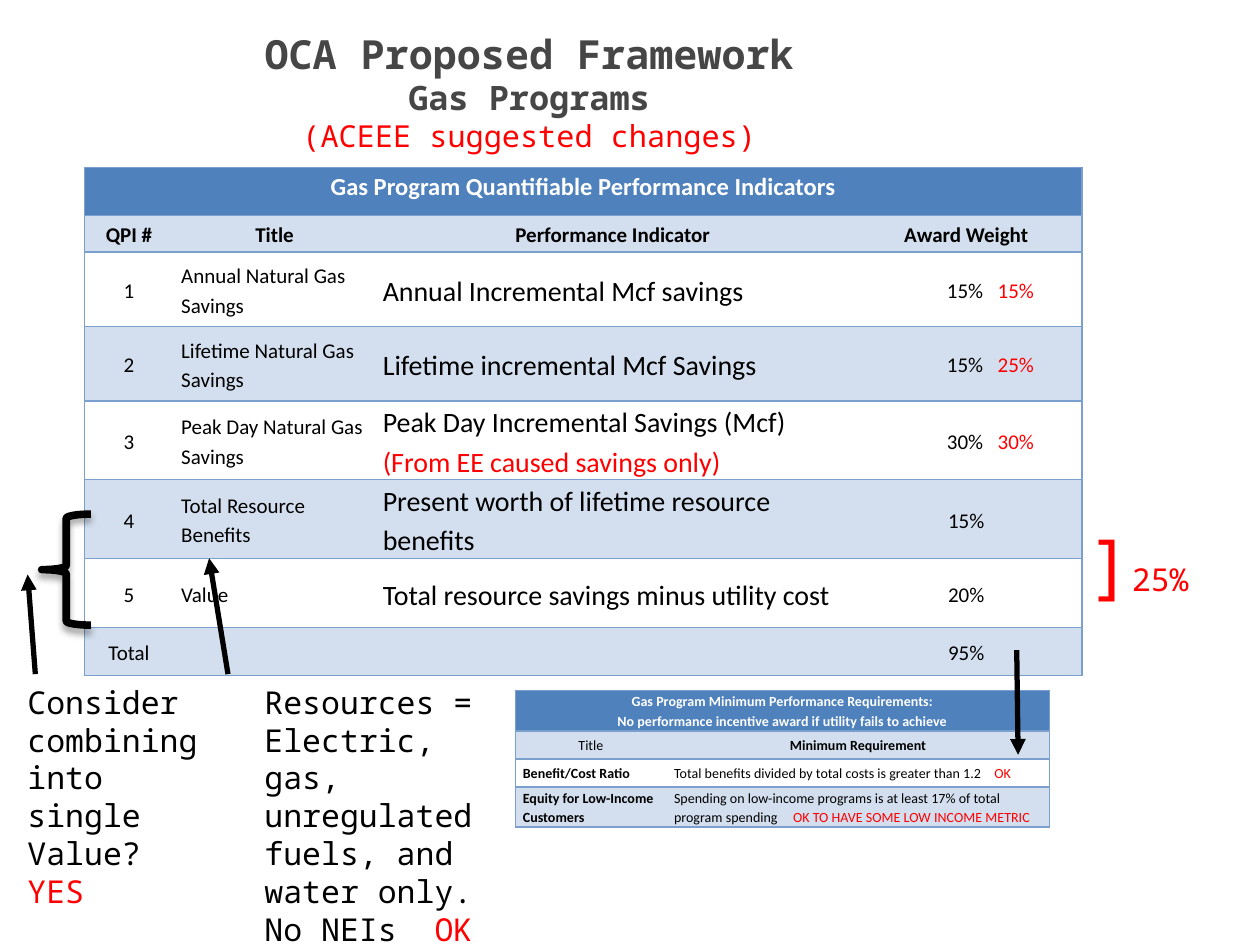
from lxml import etree
from pptx import Presentation
from pptx.dml.color import RGBColor
from pptx.enum.shapes import MSO_CONNECTOR, MSO_SHAPE
from pptx.enum.text import MSO_ANCHOR, PP_ALIGN
from pptx.oxml.ns import qn
from pptx.util import Pt

LEFT, CENTER = PP_ALIGN.LEFT, PP_ALIGN.CENTER
TOP, MIDDLE = MSO_ANCHOR.TOP, MSO_ANCHOR.MIDDLE
STRAIGHT = MSO_CONNECTOR.STRAIGHT
LEFT_BRACE = MSO_SHAPE.LEFT_BRACE

BLACK = RGBColor(0x00, 0x00, 0x00)
WHITE = RGBColor(0xFF, 0xFF, 0xFF)
GRAY = RGBColor(0x46, 0x46, 0x46)
RED = RGBColor(0xFF, 0x00, 0x00)
HEADER_BLUE = RGBColor(0x4F, 0x81, 0xBD)
BAND_BLUE = RGBColor(0xD3, 0xDF, 0xEE)
BORDER_BLUE = RGBColor(0x7B, 0xA0, 0xCD)
MONO, SANS = "Noto Sans Mono", "Calibri"


def write(paragraph, text, size=18, color=BLACK, bold=False, font=MONO):
    """Add text to a paragraph; whatever follows a | is red."""
    for part, part_color in zip(text.split("|"), (color, RED)):
        if part:
            run = paragraph.add_run()
            run.text = part
            run.font.size = Pt(size)
            run.font.name = font
            run.font.bold = bold
            run.font.color.rgb = part_color


def set_borders(cell, sides):
    """Draw the named sides of a cell and clear the others."""
    properties = cell._tc.get_or_add_tcPr()
    for index, side in enumerate("LRTB"):
        line = etree.Element(qn(f"a:ln{side}"), w=str(Pt(1)))
        if side in sides:
            fill = etree.SubElement(line, qn("a:solidFill"))
            etree.SubElement(fill, qn("a:srgbClr"), val=str(BORDER_BLUE))
        else:
            etree.SubElement(line, qn("a:noFill"))
        properties.insert(index, line)


presentation = Presentation()
presentation.slide_width, presentation.slide_height = Pt(720), Pt(540)
slide = presentation.slides.add_slide(presentation.slide_layouts[6])

# Tables: "\n" starts a paragraph, tabs place the suggested values
requirements = {
    "position": (294.5, 394.6),
    "widths": (86.4, 218.9),
    "heights": (23, 16, 16, 23),
    "sizes": (8, 8),
    "header_size": 8,
    "alignments": (LEFT, LEFT),
    "bold_columns": (0,),
    "plain_headings": ("Title",),
    "rows": (
        ("Gas Program Minimum Performance Requirements:\n"
         "No performance incentive award if utility fails to achieve",),
        ("Title", "Minimum Requirement"),
        ("Benefit/Cost Ratio",
         "Total benefits divided by total costs is greater than 1.2\t|OK"),
        ("Equity for Low-Income Customers",
         "Spending on low-income programs is at least 17% of total "
         "program spending\t|OK TO HAVE SOME LOW INCOME METRIC"),
    ),
    "tabs": (68, 183),
}
indicators = {
    "position": (48.2, 95.8),
    "widths": (51.1, 115.2, 271.4, 132.5),
    "heights": (27.4, 20.9, 42.5, 42.5, 44.6, 44.6, 39.6, 27.4),
    "sizes": (12, 12, 16, 12),
    "header_size": 14,
    "alignments": (CENTER, LEFT, LEFT, CENTER),
    "bold_columns": (),
    "plain_headings": (),
    "rows": (
        ("Gas Program Quantifiable Performance Indicators",),
        ("QPI #", "Title", "Performance Indicator", "Award Weight"),
        ("1", "Annual Natural Gas Savings",
         "Annual Incremental Mcf savings", "\t15%\t|15%"),
        ("2", "Lifetime Natural Gas Savings",
         "Lifetime incremental Mcf Savings", "\t15%\t|25%"),
        ("3", "Peak Day Natural Gas Savings",
         "Peak Day Incremental Savings (Mcf)\n|(From EE caused savings only)",
         "\t30%\t|30%"),
        ("4", "Total Resource Benefits",
         "Present worth of lifetime resource benefits", "15%"),
        ("5", "Value", "Total resource savings minus utility cost", "20%"),
        ("Total", "", "", "95%"),
    ),
    "tabs": (51, 80),
}

for spec in (requirements, indicators):
    widths, heights = spec["widths"], spec["heights"]
    left, top = spec["position"]
    table = slide.shapes.add_table(
        len(heights), len(widths), Pt(left), Pt(top),
        Pt(sum(widths)), Pt(sum(heights))).table
    table.first_row = table.horz_banding = False
    for column, width in zip(table.columns, widths):
        column.width = Pt(width)
    for row, height in zip(table.rows, heights):
        row.height = Pt(height)
    last = len(widths) - 1
    table.cell(0, 0).merge(table.cell(0, last))

    for row_index, texts in enumerate(spec["rows"]):
        title_row, heading_row = row_index == 0, row_index == 1
        for column_index in range(len(widths)):
            cell = table.cell(row_index, column_index)
            sides = "TB"
            if title_row or column_index == 0:
                sides += "L"
            if title_row or column_index == last:
                sides += "R"
            set_borders(cell, sides)
            if title_row or row_index % 2:
                cell.fill.solid()
                cell.fill.fore_color.rgb = HEADER_BLUE if title_row else BAND_BLUE
            else:
                cell.fill.background()
            cell.margin_left = cell.margin_right = Pt(4.3)
            cell.margin_top = cell.margin_bottom = 0
            cell.vertical_anchor = TOP if title_row else MIDDLE
            if column_index >= len(texts) or not texts[column_index]:
                continue

            size = spec["sizes"][column_index]
            alignment = spec["alignments"][column_index]
            bold = column_index in spec["bold_columns"]
            if title_row:
                size, alignment, bold = spec["header_size"], CENTER, True
            elif heading_row:
                size, alignment = min(spec["sizes"]), CENTER
                bold = texts[column_index] not in spec["plain_headings"]
            for index, line in enumerate(texts[column_index].split("\n")):
                frame = cell.text_frame
                paragraph = frame.add_paragraph() if index else frame.paragraphs[0]
                paragraph.alignment = LEFT if "\t" in line else alignment
                paragraph.line_spacing = 1.15
                if "\t" in line:
                    tab_list = etree.SubElement(
                        paragraph._p.get_or_add_pPr(), qn("a:tabLst"))
                    for stop in spec["tabs"]:
                        etree.SubElement(tab_list, qn("a:tab"),
                                         pos=str(Pt(stop)), algn="l")
                write(paragraph, line, size=size, bold=bold, font=SANS,
                      color=WHITE if title_row else BLACK)

# Title and side notes: box, anchor, alignment, paragraphs of formatted runs
notes = (
    ((27.4, 18, 550, 68.4), MIDDLE, CENTER, (
        (("OCA Proposed Framework", {"size": 22.9, "color": GRAY, "bold": True}),),
        (("Gas Programs", {"size": 19.2, "color": GRAY, "bold": True}),),
        (("(ACEEE suggested changes)", {"size": 17.3, "color": RED}),))),
    ((612.7, 293.8, 76.3, 56.2), TOP, CENTER, (
        (("]", {"size": 40.5, "color": RED}), ("25%", {"color": RED})),)),
    ((144, 386.6, 136.1, 138.2), TOP, LEFT, (
        (("Resources = Electric, gas, unregulated fuels, and water only. "
          "No NEIs  |OK", {}),),)),
    ((8.6, 386.6, 116.6, 94.3), TOP, LEFT, (
        (("Consider combining into single Value? |YES", {}),),)),
)
for box, anchor, alignment, paragraphs in notes:
    frame = slide.shapes.add_textbox(*map(Pt, box)).text_frame
    frame.word_wrap = True
    frame.vertical_anchor = anchor
    for index, runs in enumerate(paragraphs):
        paragraph = frame.add_paragraph() if index else frame.paragraphs[0]
        paragraph.alignment = alignment
        for text, text_format in runs:
            write(paragraph, text, **text_format)

# Brace joining indicators 4 and 5
brace = slide.shapes.add_shape(LEFT_BRACE, Pt(23.8), Pt(293.8), Pt(28.1), Pt(63.4))
brace.fill.background()
brace.line.color.rgb = BLACK
brace.line.width = Pt(4.33)
brace.shadow.inherit = False
effects = brace._element.spPr.find(qn("a:effectLst"))
shadow = etree.SubElement(effects, qn("a:outerShdw"), blurRad=str(Pt(4)),
                          dist=str(Pt(3)), dir="5400000", rotWithShape="0")
shadow_color = etree.SubElement(shadow, qn("a:srgbClr"), val=str(BLACK))
etree.SubElement(shadow_color, qn("a:alpha"), val="35000")

# Arrows
arrows = (
    (581, 371.5, 581.8, 431.3),
    (130.3, 385.2, 119.5, 319),
    (20.2, 385.2, 15.8, 328.3),
)
for ends in arrows:
    arrow = slide.shapes.add_connector(STRAIGHT, *map(Pt, ends))
    arrow.line.color.rgb = BLACK
    arrow.line.width = Pt(3)
    etree.SubElement(arrow.line._get_or_add_ln(), qn("a:tailEnd"), type="triangle")
    etree.SubElement(arrow._element.spPr, qn("a:effectLst"))

presentation.save("out.pptx")
